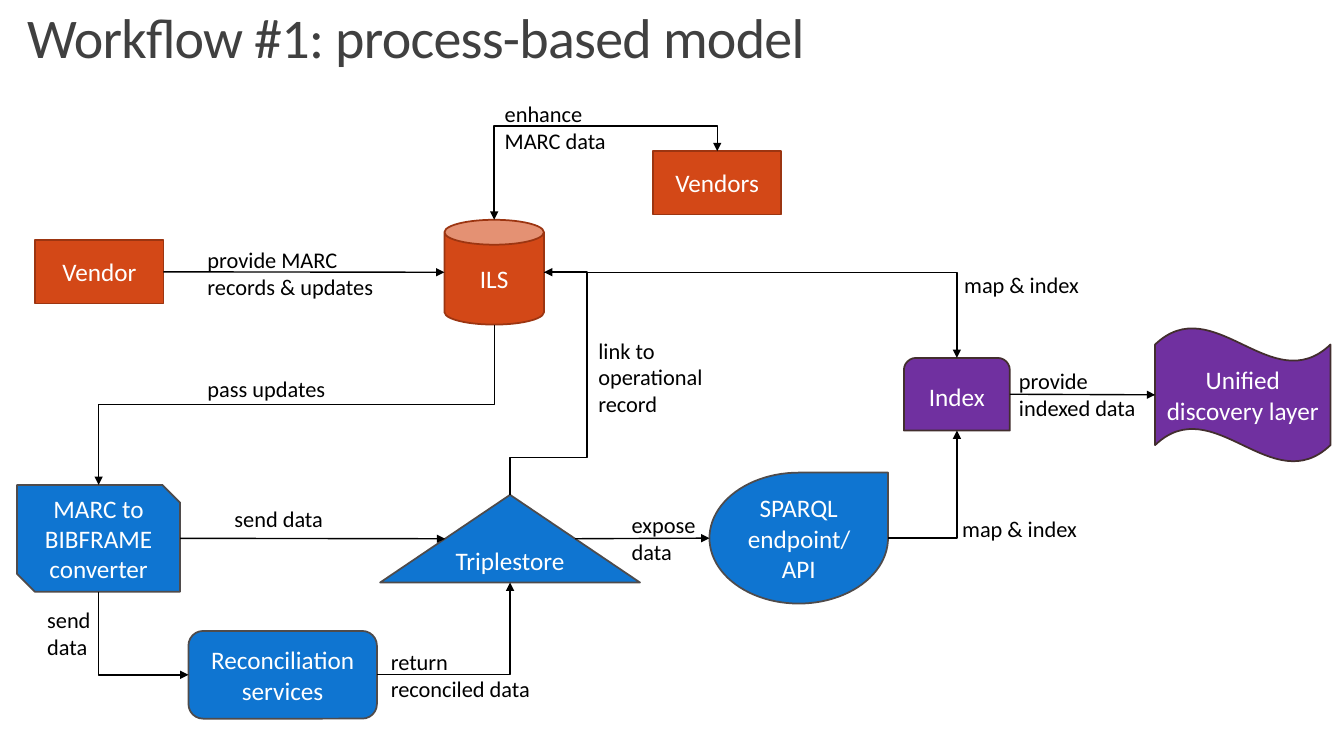
from lxml.etree import SubElement
from pptx import Presentation
from pptx.dml.color import RGBColor
from pptx.enum.shapes import MSO_CONNECTOR as CXN, MSO_SHAPE as SH
from pptx.enum.text import MSO_ANCHOR, MSO_AUTO_SIZE, PP_ALIGN
from pptx.oxml.ns import qn
from pptx.util import Cm, Pt

TITLE = "Workflow #1: process-based model"
FONT = "Calibri"
ORANGE, PURPLE, BLUE = ("D34817", "9C3511"), ("7030A0", "422E2E"), ("0F75D1", "4F4B4B")

NODES = {
    "ils": ("ILS", SH.CAN, ORANGE, 11.2, 5.54, 2.51, 2.64),
    "index": ("Index", SH.ROUND_2_SAME_RECTANGLE, PURPLE, 22.78, 9.02, 2.67, 1.83),
    "discovery": ("Unified discovery layer", SH.WAVE, PURPLE, 29.11, 8.26, 4.42, 3.38),
    "converter": ("MARC to BIBFRAME converter", SH.SNIP_2_DIAG_RECTANGLE, BLUE,
                  0.43, 12.22, 4.11, 2.69),
    "triplestore": ("Triplestore", SH.ISOSCELES_TRIANGLE, BLUE, 9.58, 12.47, 6.55, 2.21),
    "vendors": ("Vendors", SH.RECTANGLE, ORANGE, 16.46, 3.81, 3.23, 1.6),
    "sparql": ("SPARQL endpoint/API", SH.TEAR, BLUE, 17.88, 11.91, 4.5, 3.3),
    "reconciliation": ("Reconciliation services", SH.ROUNDED_RECTANGLE, BLUE,
                       4.75, 15.9, 4.75, 2.21),
    "vendor": ("Vendor", SH.RECTANGLE, ORANGE, 0.89, 6.05, 3.23, 1.6),
}

TOP, BOTTOM, LEFT, RIGHT = (0.5, 0), (0.5, 1), (0, 0.5), (1, 0.5)
SLOPE_LEFT, SLOPE_RIGHT = (0.25, 0.5), (0.75, 0.5)

STRAIGHT = [
    ("vendor", RIGHT, "ils", LEFT),
    ("converter", RIGHT, "triplestore", SLOPE_LEFT),
    ("triplestore", SLOPE_RIGHT, "sparql", LEFT),
    ("index", RIGHT, "discovery", LEFT),
]

# start, side, end, side, rotation, bend positions, arrow at both ends
BENT = [
    ("ils", BOTTOM, "converter", TOP, 90, [0.5], False),
    ("ils", RIGHT, "index", TOP, 0, [], False),
    ("sparql", RIGHT, "index", BOTTOM, 0, [], False),
    ("ils", TOP, "vendors", TOP, 90, [1.366], True),
    ("converter", BOTTOM, "reconciliation", LEFT, 270, [], False),
    ("reconciliation", RIGHT, "triplestore", BOTTOM, 0, [], False),
    ("triplestore", TOP, "ils", RIGHT, 90, [0.168, 2.261], False),
]

LABELS = [
    (["provide", "indexed data"], 25.43, 9.12, 3.68, 1.63),
    (["map & index"], 24.05, 6.71, 4.04, 0.94),
    (["enhance", "MARC data"], 12.47, 2.39, 5.72, 1.63),
    (["provide MARC records & updates"], 4.98, 6.07, 4.93, 1.63),
    (["pass updates"], 4.98, 9.32, 4.04, 0.94),
    (["send data"], 0.94, 15.16, 2.72, 1.63),
    (["return reconciled data"], 9.6, 16.21, 4.04, 1.63),
    (["expose", "data"], 15.67, 12.75, 4.04, 1.63),
    (["map & index"], 24, 12.85, 4.04, 0.94),
    (["link to operational record"], 14.83, 8.36, 3.35, 2.31),
    (["send data"], 5.66, 12.6, 4.04, 0.94),
]


def rgb(color):
    return RGBColor.from_string(color)


def write(tf, lines, size, color, align):
    tf.word_wrap = True
    tf.text = "\n".join(lines)
    for p in tf.paragraphs:
        p.alignment = align
        p.font.name, p.font.size = FONT, Pt(size)
        p.font.color.rgb = rgb(color)


def add_node(s, text, kind, colors, *box):
    sp = s.shapes.add_shape(kind, *map(Cm, box))
    sp.shadow.inherit = False
    sp.fill.solid()
    sp.fill.fore_color.rgb = rgb(colors[0])
    sp.line.color.rgb = rgb(colors[1])
    sp.line.width = Pt(1.25)
    sp.text_frame.vertical_anchor = MSO_ANCHOR.MIDDLE
    write(sp.text_frame, [text], 18, "FFFFFF", PP_ALIGN.CENTER)


def site(name, side):
    x, y, w, h = NODES[name][3:]
    return x + w * side[0], y + h * side[1]


def add_arrow(s, kind, start, end, both=False):
    c = s.shapes.add_connector(kind, *map(Cm, start + end))
    c.line.color.rgb = rgb("000000")
    c.line.width = Pt(1)
    spPr = c._element.spPr
    for tag in ["a:headEnd", "a:tailEnd"] if both else ["a:tailEnd"]:
        SubElement(spPr.find(qn("a:ln")), qn(tag), type="triangle")
    SubElement(spPr, qn("a:effectLst"))
    return c


def bend(c, start, end, rotation, bends):
    dx, dy = end[0] - start[0], end[1] - start[1]
    along, across = {0: (dx, dy), 90: (dy, -dx), 270: (-dy, dx)}[rotation]
    w, h = abs(along), abs(across)
    c.left, c.top = Cm((start[0] + end[0] - w) / 2), Cm((start[1] + end[1] - h) / 2)
    c.width, c.height = Cm(w), Cm(h)
    spPr = c._element.spPr
    xfrm, geom = spPr.find(qn("a:xfrm")), spPr.find(qn("a:prstGeom"))
    xfrm.set("rot", str(rotation * 60000))
    xfrm.set("flipH", str(int(along < 0)))
    xfrm.set("flipV", str(int(across < 0)))
    geom.set("prst", f"bentConnector{len(bends) + 2}")
    guides = geom.find(qn("a:avLst"))
    for i, position in enumerate(bends, 1):
        SubElement(guides, qn("a:gd"), name=f"adj{i}", fmla=f"val {round(position * 100000)}")


def add_title(s):
    sp = s.shapes.title
    sp.left, sp.top, sp.width, sp.height = map(Cm, (0.43, 0, 27.94, 1.88))
    tf = sp.text_frame
    tf.auto_size = MSO_AUTO_SIZE.NONE
    tf.vertical_anchor = MSO_ANCHOR.BOTTOM
    write(tf, [TITLE], 40, "404040", PP_ALIGN.LEFT)
    p = tf.paragraphs[0]
    p.line_spacing = 0.85
    p.runs[0].font._element.set("spc", "-50")


def main():
    prs = Presentation()
    prs.slide_width, prs.slide_height = Cm(33.87), Cm(19.05)
    s = prs.slides.add_slide(prs.slide_layouts[5])
    add_title(s)
    for node in NODES.values():
        add_node(s, *node)
    for a, side_a, b, side_b in STRAIGHT:
        add_arrow(s, CXN.STRAIGHT, site(a, side_a), site(b, side_b))
    for a, side_a, b, side_b, rotation, bends, both in BENT:
        start, end = site(a, side_a), site(b, side_b)
        bend(add_arrow(s, CXN.ELBOW, start, end, both), start, end, rotation, bends)
    for lines, *box in LABELS:
        tf = s.shapes.add_textbox(*map(Cm, box)).text_frame
        write(tf, lines, 16, "000000", PP_ALIGN.LEFT)
    prs.save("out.pptx")


if __name__ == "__main__":
    main()
